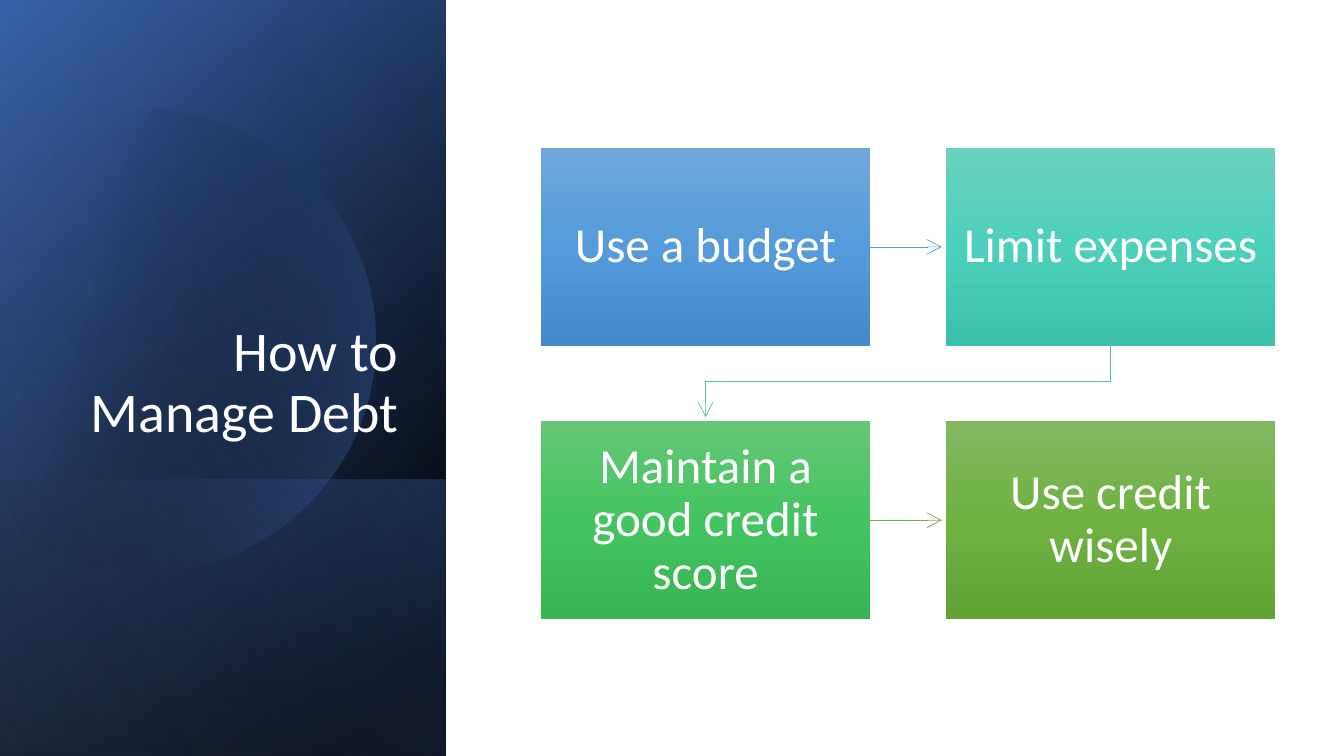
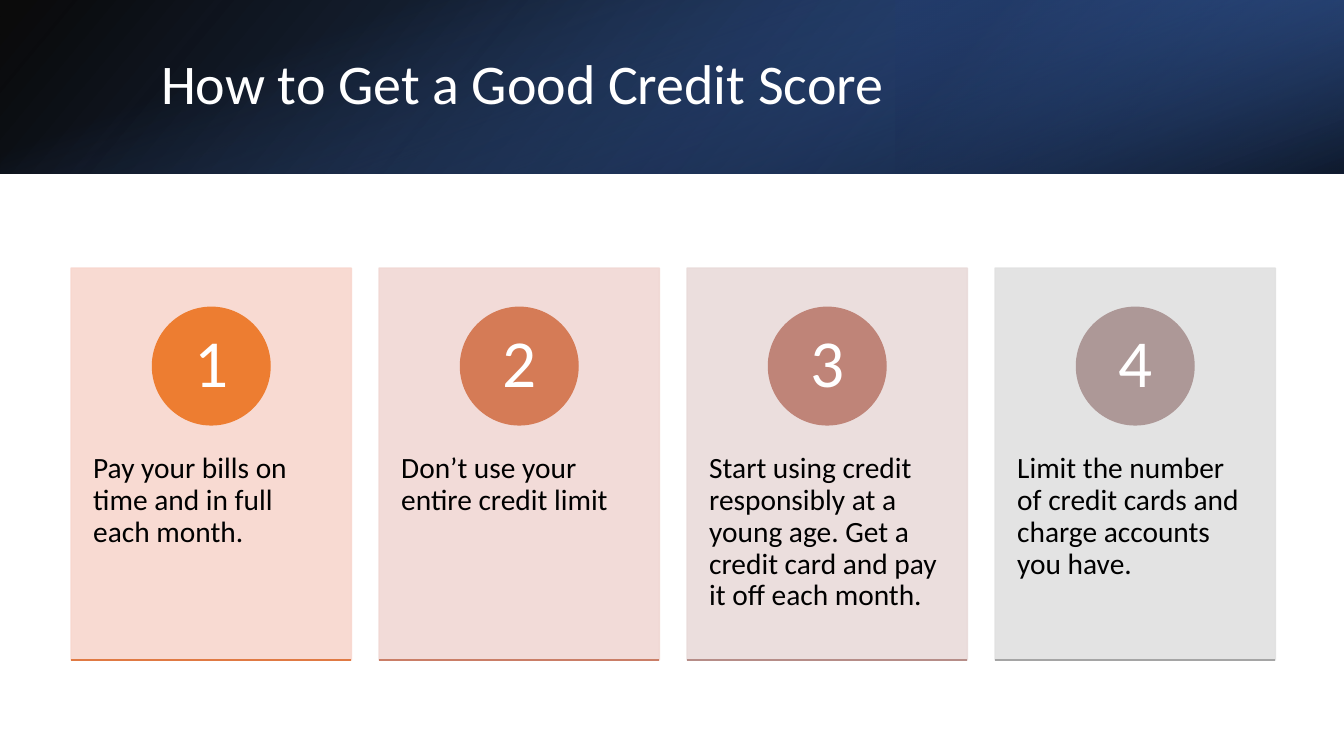
import math

import lxml.etree
import pptx
import pptx.dml.color
import pptx.enum.shapes
import pptx.enum.text
import pptx.oxml.ns
import pptx.util

Pt = pptx.util.Pt
RGB = pptx.dml.color.RGBColor
qn = pptx.oxml.ns.qn
SHAPE = pptx.enum.shapes.MSO_SHAPE
CONNECTOR = pptx.enum.shapes.MSO_CONNECTOR
ALIGN = pptx.enum.text.PP_ALIGN
ANCHOR = pptx.enum.text.MSO_ANCHOR

FONT = "Calibri"
BLACK = RGB(0x00, 0x00, 0x00)
WHITE = RGB(0xFF, 0xFF, 0xFF)
BLUE = RGB(0x44, 0x72, 0xC4)
DEEP_BLUE = RGB(0x2F, 0x55, 0x97)
NAVY = RGB(0x20, 0x38, 0x64)
PALE_BLUE = RGB(0x8F, 0xAA, 0xDC)
ARROW_BLUE = RGB(0x5B, 0x9B, 0xD5)
ARROW_TEAL = RGB(0x4D, 0xC5, 0x8D)
ARROW_GREEN = RGB(0x70, 0xAD, 0x47)


def fill_gradient(shape, stops, angle):
    shape.shadow.inherit = False
    shape.line.fill.background()
    shape.fill.background()
    properties = shape._element.spPr
    gradient = lxml.etree.Element(qn("a:gradFill"), rotWithShape="1")
    stop_list = lxml.etree.SubElement(gradient, qn("a:gsLst"))
    for position, color, opacity in stops:
        stop = lxml.etree.SubElement(stop_list, qn("a:gs"), pos=str(position * 1000))
        tone = lxml.etree.SubElement(stop, qn("a:srgbClr"), val=str(color))
        lxml.etree.SubElement(tone, qn("a:alpha"), val=str(opacity * 1000))
    lxml.etree.SubElement(gradient, qn("a:lin"), ang=str(angle * 60000), scaled="0")
    properties.replace(properties.find(qn("a:noFill")), gradient)


def write_text(shape, text, size, color, align, anchor, insets):
    frame = shape.text_frame
    frame.word_wrap = True
    frame.vertical_anchor = anchor
    frame.margin_left = frame.margin_right = Pt(insets[0])
    frame.margin_top, frame.margin_bottom = Pt(insets[1]), Pt(insets[2])
    paragraph = frame.paragraphs[0]
    paragraph.text = text
    paragraph.alignment = align
    paragraph.line_spacing = 0.9
    paragraph.font.name = FONT
    paragraph.font.size = Pt(size)
    paragraph.font.color.rgb = color


presentation = pptx.Presentation()
presentation.slide_width = Pt(960)
presentation.slide_height = Pt(540)
blank = presentation.slide_layouts[6]
debt_slide = presentation.slides.add_slide(blank)
score_slide = presentation.slides.add_slide(blank)

PANEL = (0, 0, 318.5, 540)
PANEL_FOOT = (0, 342.7, 318.5, 197.3)
BAND = (0, 0, 960, 124)
BAND_RIGHT = (640, 0, 320, 124)
backdrops = [
    (debt_slide, PANEL, 90, True, [(8, BLACK, 100), (100, DEEP_BLUE, 100)], 50),
    (debt_slide, PANEL, 90, True, [(0, BLACK, 0), (99, BLUE, 46)], 30),
    (debt_slide, PANEL_FOOT, 90, True, [(2, BLUE, 29), (100, BLACK, 30)], 130),
    (debt_slide, None, 0, False, [(29, BLACK, 0), (100, BLUE, 43)], 14),
    (debt_slide, PANEL, 90, True, [(0, BLACK, 0), (99, PALE_BLUE, 11)], 120),
    (score_slide, BAND, 0, True, [(0, BLACK, 96), (100, DEEP_BLUE, 100)], 140),
    (score_slide, BAND_RIGHT, 180, True, [(19, NAVY, 68), (100, BLUE, 79)], 320),
    (score_slide, BAND, 90, False, [(23, BLUE, 0), (99, BLACK, 74)], 340),
]
for slide, box, rotation, flipped, stops, angle in backdrops:
    if box:
        left, top, width, height = box
        if rotation == 90:
            left, top = left + (width - height) / 2, top + (height - width) / 2
            width, height = height, width
        shape = slide.shapes.add_shape(SHAPE.RECTANGLE, Pt(left), Pt(top), Pt(width), Pt(height))
        shape.rotation = rotation
        if flipped:
            shape._element.spPr.xfrm.set("flipH", "1")
    else:
        arc = [
            (Pt(103 + 165 * math.cos(math.radians(degree))), Pt(243 + 165 * math.sin(math.radians(degree))))
            for degree in range(-132, 133, 3)
        ]
        outline = slide.shapes.build_freeform(*arc[0])
        outline.add_line_segments(arc[1:], close=True)
        shape = outline.convert_to_shape()
    fill_gradient(shape, stops, angle)

titles = [
    (debt_slide, "How to Manage Debt", (46, 132.5, 245.5, 188.6), ALIGN.RIGHT, ANCHOR.BOTTOM),
    (score_slide, "How to Get a Good Credit Score", (108, 27.4, 790.6, 69), ALIGN.LEFT, ANCHOR.MIDDLE),
]
for slide, text, box, align, anchor in titles:
    title = slide.shapes.add_textbox(*map(Pt, box))
    write_text(title, text, 40, WHITE, align, anchor, (7.2, 3.6, 3.6))

STEP_LEFT, STEP_TOP, STEP_WIDTH, STEP_HEIGHT = 386.4, 105.8, 235.2, 141.2
COLUMN_PITCH, ROW_PITCH = 289.4, 195.2
ARROW_GAP = 3
steps = [
    ("Use a budget", RGB(0x71, 0xA6, 0xDB), RGB(0x55, 0x9B, 0xDB), RGB(0x44, 0x8A, 0xCA)),
    ("Limit expenses", RGB(0x6A, 0xD1, 0xC0), RGB(0x4C, 0xD0, 0xBC), RGB(0x3C, 0xC0, 0xAC)),
    ("Maintain a good credit score", RGB(0x64, 0xC6, 0x77), RGB(0x44, 0xC4, 0x60), RGB(0x36, 0xB5, 0x52)),
    ("Use credit wisely", RGB(0x81, 0xB8, 0x61), RGB(0x6F, 0xB2, 0x42), RGB(0x62, 0xA3, 0x36)),
]
for index, (text, light, middle, dark) in enumerate(steps):
    row, column = divmod(index, 2)
    step = debt_slide.shapes.add_shape(
        SHAPE.RECTANGLE,
        Pt(STEP_LEFT + column * COLUMN_PITCH),
        Pt(STEP_TOP + row * ROW_PITCH),
        Pt(STEP_WIDTH),
        Pt(STEP_HEIGHT),
    )
    fill_gradient(step, [(0, light, 100), (50, middle, 100), (100, dark, 100)], 90)
    write_text(step, text, 35, WHITE, ALIGN.CENTER, ANCHOR.MIDDLE, (11.5, 12, 12))

arrow_left = STEP_LEFT + STEP_WIDTH
arrow_right = STEP_LEFT + COLUMN_PITCH - ARROW_GAP
first_row = STEP_TOP + STEP_HEIGHT / 2
second_row = first_row + ROW_PITCH
drop = ROW_PITCH - STEP_HEIGHT - ARROW_GAP
elbow_x = STEP_LEFT + (STEP_WIDTH + COLUMN_PITCH) / 2
elbow_y = STEP_TOP + STEP_HEIGHT + drop / 2
arrows = [
    (CONNECTOR.STRAIGHT, (arrow_left, first_row, arrow_right, first_row), 0, ARROW_BLUE),
    (
        CONNECTOR.ELBOW,
        (elbow_x - drop / 2, elbow_y - COLUMN_PITCH / 2, elbow_x + drop / 2, elbow_y + COLUMN_PITCH / 2),
        90,
        ARROW_TEAL,
    ),
    (CONNECTOR.STRAIGHT, (arrow_left, second_row, arrow_right, second_row), 0, ARROW_GREEN),
]
for kind, ends, rotation, color in arrows:
    arrow = debt_slide.shapes.add_connector(kind, *map(Pt, ends))
    arrow.line.color.rgb = color
    arrow.line.width = Pt(0.5)
    properties = arrow._element.spPr
    properties.xfrm.set("rot", str(rotation * 60000))
    lxml.etree.SubElement(properties.find(qn("a:ln")), qn("a:tailEnd"), type="arrow", w="lg", len="lg")
    lxml.etree.SubElement(properties, qn("a:effectLst"))

CARD_LEFT, CARD_TOP, CARD_WIDTH, CARD_HEIGHT, CARD_PITCH = 50.8, 191.5, 200.2, 280, 220
BADGE_TOP, BADGE_SIZE = 219.5, 84
cards = [
    (
        "Pay your bills on time and in full each month.",
        RGB(0xF8, 0xD7, 0xCE), RGB(0xED, 0x7D, 0x31), RGB(0xE0, 0x7A, 0x44),
    ),
    (
        "Don’t use your entire credit limit",
        RGB(0xF1, 0xD8, 0xD4), RGB(0xD5, 0x7B, 0x56), RGB(0xCA, 0x7E, 0x67),
    ),
    (
        "Start using credit responsibly at a young age. Get a credit card and pay it off each month.",
        RGB(0xE9, 0xDB, 0xDA), RGB(0xBF, 0x84, 0x78), RGB(0xB6, 0x8D, 0x88),
    ),
    (
        "Limit the number of credit cards and charge accounts you have.",
        RGB(0xE1, 0xE1, 0xE1), RGB(0xAD, 0x98, 0x97), RGB(0xA5, 0xA5, 0xA5),
    ),
]
for index, (text, card_color, badge_color, rule_color) in enumerate(cards):
    left = CARD_LEFT + index * CARD_PITCH
    badge_left = left + (CARD_WIDTH - BADGE_SIZE) / 2
    card = score_slide.shapes.add_shape(
        SHAPE.RECTANGLE, Pt(left), Pt(CARD_TOP), Pt(CARD_WIDTH), Pt(CARD_HEIGHT)
    )
    badge = score_slide.shapes.add_shape(
        SHAPE.OVAL, Pt(badge_left), Pt(BADGE_TOP), Pt(BADGE_SIZE), Pt(BADGE_SIZE)
    )
    for shape, color in ((card, card_color), (badge, badge_color)):
        shape.shadow.inherit = False
        shape.fill.solid()
        shape.fill.fore_color.rgb = color
        shape.line.color.rgb = color
        shape.line.width = Pt(1)
    for tone in list(card._element.spPr.iter(qn("a:srgbClr"))):
        lxml.etree.SubElement(tone, qn("a:alpha"), val="90000")
    write_text(card, text, 21, BLACK, ALIGN.LEFT, ANCHOR.TOP, (15.8, 132.5, 26))
    write_text(badge, str(index + 1), 48, WHITE, ALIGN.CENTER, ANCHOR.MIDDLE, (0, 0, 0))

    bottom = CARD_TOP + CARD_HEIGHT
    rule = score_slide.shapes.add_connector(
        CONNECTOR.STRAIGHT, Pt(left), Pt(bottom), Pt(left + CARD_WIDTH), Pt(bottom)
    )
    rule.line.color.rgb = rule_color
    rule.line.width = Pt(1)
    lxml.etree.SubElement(rule._element.spPr, qn("a:effectLst"))

presentation.save("out.pptx")
